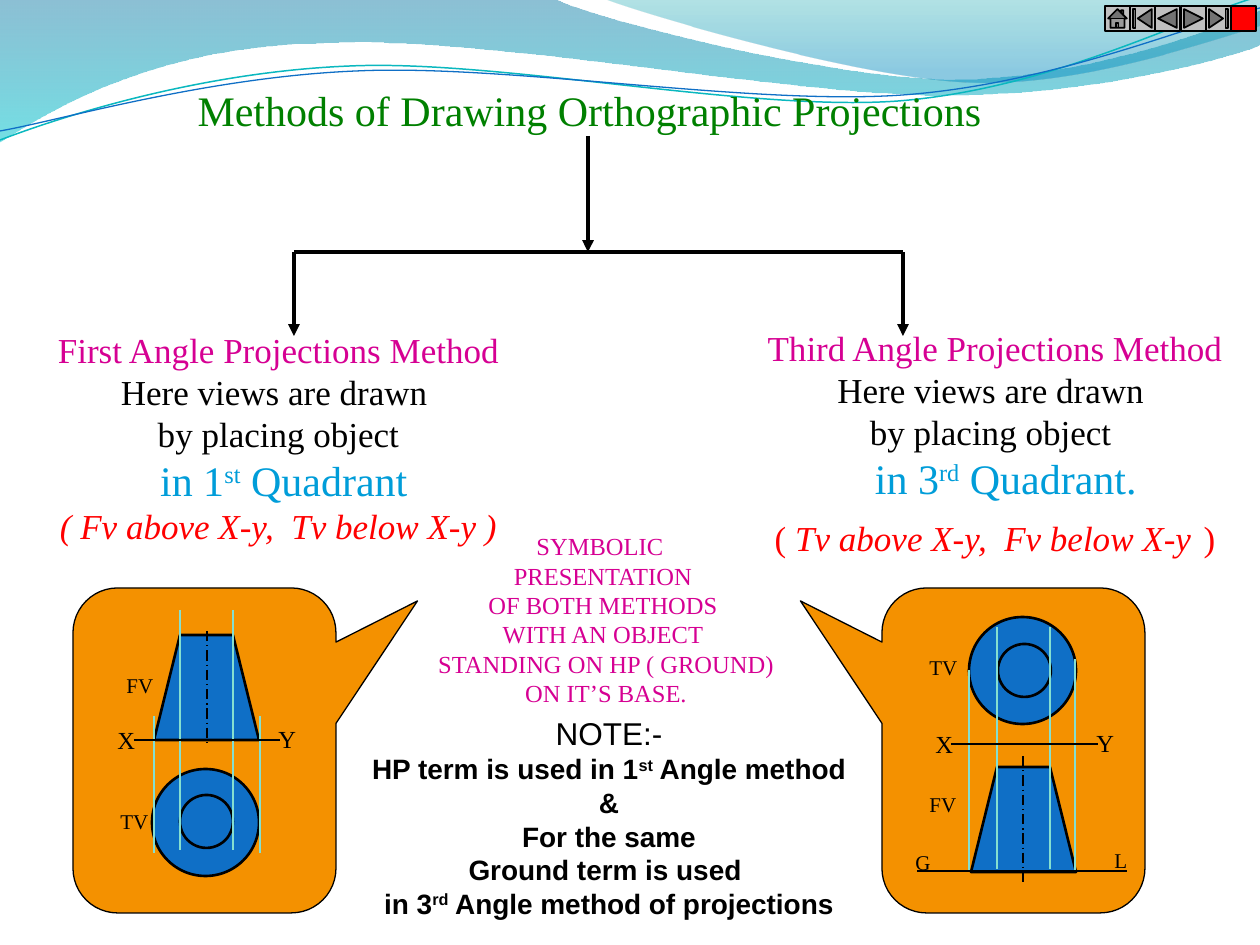
from lxml.etree import SubElement as Sub
from pptx import Presentation
from pptx.dml.color import RGBColor as RGB
from pptx.enum.dml import MSO_LINE
from pptx.enum.shapes import MSO_CONNECTOR, MSO_SHAPE as SHAPE
from pptx.enum.text import MSO_ANCHOR, MSO_AUTO_SIZE as AUTO, PP_ALIGN as ALIGN
from pptx.oxml.ns import qn
from pptx.util import Pt

PX = 914400 / 126
BLACK, RED = RGB(0, 0, 0), RGB(255, 0, 0)
GREEN, PINK = RGB(0, 128, 0), RGB(0xD6, 0, 0x93)
SKY, BLUE = RGB(0, 0x9D, 0xD9), RGB(0x0F, 0x6F, 0xC6)
AMBER, MINT = RGB(0xF4, 0x91, 0), RGB(0x85, 0xDF, 0xD0)
GREY, TEAL = RGB(0xC0, 0xC0, 0xC0), RGB(0x0A, 0xB8, 0xBF)
SERIF, SANS = "Times New Roman", "Arial"

# Waves: start, then points (2 numbers) or cubic curves (6 numbers)
BANDS = [
    ([(0, 0), (554, -1), (600, 21, 837, 79, 955, 79),
      (1075, 79, 1207, 33, 1260, 11), (1261, 45),
      (1239, 55, 1096, 96, 940, 95), (784, 95, 481, 35, 324, 43),
      (163, 45, 58, 105, -1, 142)],
     [(0, RGB(0, 0x74, 0xA1), 45), (1, RGB(0, 0xC6, 0xCF), 55)]),
    ([(604, -1), (641, 14, 859, 78, 969, 82),
      (1079, 87, 1211, 40, 1260, 26), (1260, 0)],
     [(0, RGB(0, 0xA1, 0xA9), 30), (0.8, RGB(0, 0x8B, 0xBF), 45)]),
]
STRANDS = [
    ([(0, 140), (60, 117, 199, 72, 349, 66), (498, 59, 747, 112, 898, 101),
      (1050, 89, 1182, 19, 1257, -3)], TEAL, 0.85),
    ([(0, 131), (58, 121, 207, 77, 357, 71), (508, 64, 752, 106, 903, 95),
      (1053, 84, 1186, 26, 1260, 8)], BLUE, 0.75),
]

# Text: box, font, paragraphs of runs (text, size, colour, style)
TITLE = "Methods of Drawing Orthographic Projections"
TEXTS = [
    ((31, 322, 495, 231), SERIF, [
        [("First Angle Projections Method", 20, PINK, "")],
        [("Here views are drawn ", 20, BLACK, "")],
        [("by placing object", 20, BLACK, "")],
        [(" in 1", 24, SKY, ""), ("st", 24, SKY, "s"),
         (" Quadrant", 24, SKY, "")],
        [("( Fv above X-y,  Tv below X-y )", 20, RED, "i")]]),
    ((741, 320, 508, 248), SERIF, [
        [("Third Angle Projections Method", 20, PINK, "")],
        [("Here views are drawn ", 20, BLACK, "")],
        [("by placing object ", 20, BLACK, "")],
        [(" in 3", 24, SKY, "m"), ("rd", 24, SKY, "s"),
         (" Quadrant.", 24, SKY, "")],
        [("( ", 20, RED, ""), ("Tv above X-y,  Fv below X-y", 20, RED, "i"),
         (" ", 28, RED, ""), (")", 20, RED, "")]]),
    ((412, 525, 382, 189), SERIF, [[(t, 14, PINK, "")] for t in (
        "SYMBOLIC ", "PRESENTATION", "OF BOTH METHODS", "WITH AN OBJECT",
        " STANDING ON HP ( GROUND)", " ON IT’S BASE.")]),
    ((355, 708, 508, 220), SANS, [
        [("NOTE:-", 18, BLACK, "")],
        [("HP term is used in 1", 16, BLACK, "b"), ("st", 16, BLACK, "bs"),
         (" Angle method", 16, BLACK, "b")],
        [("&", 16, BLACK, "b")],
        [("For the same", 16, BLACK, "b")],
        [("Ground term is used ", 16, BLACK, "b")],
        [("in 3", 16, BLACK, "b"), ("rd", 16, BLACK, "bs"),
         (" Angle method of projections", 16, BLACK, "b")]]),
]

# Arrows from the title to both methods
TREE = [((294, 252, 903, 252), False), ((588, 136, 588, 252), True),
        ((294, 252, 294, 336), True), ((903, 252, 903, 336), True)]

# Symbols: callout left and tip, front view, top view, lines, labels
VIEWS = [
    dict(left=73, tip=0.81, cone=(154, 635), disc=(152, 769), hole=(180, 795),
         ties=[(260, 716, 853), (154, 716, 853), (233, 610, 850),
               (180, 610, 850)],
         axis=(207, 631, 746), base=[(134, 740, 280, 1.5)],
         tags=[("FV", 114, 666, 12), ("TV", 108, 802, 12),
               ("X", 105, 719, 14), ("Y", 266, 718, 14)]),
    dict(left=882, tip=-0.81, cone=(971, 767), disc=(969, 617),
         hole=(998, 644),
         ties=[(1075, 659, 871), (969, 670, 871), (1050, 627, 869),
               (997, 627, 869)],
         axis=(1023, 756, 882),
         base=[(951, 744, 1098, 1.5), (917, 871, 1127, 0.75)],
         tags=[("X", 923, 723, 14), ("Y", 1084, 722, 14),
               ("G", 903, 843, 12), ("L", 1102, 841, 12),
               ("TV", 917, 648, 12), ("FV", 917, 785, 12)]),
]
BUTTONS = [SHAPE.ACTION_BUTTON_HOME, SHAPE.ACTION_BUTTON_BEGINNING,
           SHAPE.ACTION_BUTTON_BACK_OR_PREVIOUS,
           SHAPE.ACTION_BUTTON_FORWARD_OR_NEXT, SHAPE.ACTION_BUTTON_END,
           SHAPE.ACTION_BUTTON_CUSTOM]

deck = Presentation()
deck.slide_width, deck.slide_height = round(1260 * PX), round(945 * PX)
slide = deck.slides.add_slide(deck.slide_layouts[5])
parts = slide.shapes


def emu(nums):
    return [round(n * PX) for n in nums]


def paint(shape, fill, line=BLACK, width=0.75):
    shape.shadow.inherit = False
    if fill is None:
        shape.fill.background()
    else:
        shape.fill.solid()
        shape.fill.fore_color.rgb = fill
    shape.line.color.rgb = line
    shape.line.width = Pt(width)
    return shape


def preset(kind, box, *style):
    return paint(parts.add_shape(kind, *emu(box)), *style)


def outline(steps, close):
    """Draw points as lines, and each step of six numbers as one curve."""
    form = parts.build_freeform(*emu(steps[0]))
    pts = [emu(s[i:i + 2]) for s in steps[1:] for i in range(0, len(s), 2)]
    form.add_line_segments(pts, close=close)
    shape = form.convert_to_shape()
    nodes = iter(list(shape.element.iter(qn("a:lnTo"))))
    for step in steps[1:]:
        node = next(nodes)
        if len(step) == 6:
            node.tag = qn("a:cubicBezTo")
            for extra in (next(nodes), next(nodes)):
                node.append(extra[0])
                extra.getparent().remove(extra)
    return shape


def rule(ends, color, width, arrow=False, dash=None):
    line = parts.add_connector(MSO_CONNECTOR.STRAIGHT, *emu(ends))
    line.line.color.rgb = color
    line.line.width = Pt(width)
    if dash:
        line.line.dash_style = dash
    if arrow:
        Sub(line.line._get_or_add_ln(), qn("a:tailEnd"), type="triangle")
    Sub(line.element.spPr, qn("a:effectLst"))


def write(shape, font, paras, align):
    frame = shape.text_frame
    form = dict(word_wrap=False, auto_size=AUTO.SHAPE_TO_FIT_TEXT,
                vertical_anchor=MSO_ANCHOR.TOP)
    for key, val in form.items():
        setattr(frame, key, val)
    for i, runs in enumerate(paras):
        para = frame.add_paragraph() if i else frame.paragraphs[0]
        para.alignment = align
        para.line_spacing = Pt(1.2 * max(r[1] for r in runs))
        for text, size, color, style in runs:
            run = para.add_run()
            run.text = text
            look = dict(name=font, size=Pt(size), bold="b" in style,
                        italic="i" in style)
            for key, val in look.items():
                setattr(run.font, key, val)
            run.font.color.rgb = color
            if "s" in style:
                run._r.get_or_add_rPr().set("baseline", "30000")
            if "m" in style:
                para._p.get_or_add_pPr().set("marL", str(round(11 * PX)))


# Waves at the top
for steps, stops in BANDS:
    band = paint(outline(steps, True), None)
    band.line.fill.background()
    band.fill.gradient()
    band.fill.gradient_angle = 270
    for stop, (pos, color, alpha) in zip(band.fill.gradient_stops, stops):
        stop.position, stop.color.rgb = pos, color
    for node, stop in zip(band.element.iter(qn("a:srgbClr")), stops):
        Sub(node, qn("a:alpha"), val=str(stop[2] * 1000))
for steps, color, width in STRANDS:
    paint(outline(steps, False), None, color, width)

# Callouts, then the tree
for view in VIEWS:
    call = preset(SHAPE.ROUNDED_RECTANGULAR_CALLOUT,
                  (view["left"], 588, 263, 325), AMBER)
    for i, val in enumerate((view["tip"], -0.46, 0.17)):
        call.adjustments[i] = val
for ends, arrow in TREE:
    rule(ends, BLACK, 2.25, arrow)

# Title and text blocks
title = parts.title
title.left, title.top, title.width, title.height = emu((185, 78, 809, 63))
write(title, SERIF, [[(TITLE, 24, GREEN, "")]], ALIGN.CENTER)
title.text_frame.margin_left = title.text_frame.margin_right = 0
parts.element.append(title.element)
for box, font, paras in TEXTS:
    write(parts.add_textbox(*emu(box)), font, paras, ALIGN.CENTER)

# Front and top views
for view in VIEWS:
    x, y = view["cone"]
    cone = [(x, y + 105), (x + 26, y), (x + 79, y), (x + 105, y + 105)]
    paint(outline(cone, True), BLUE, BLACK, 1.5)
    for key, size in (("disc", 107), ("hole", 53)):
        preset(SHAPE.OVAL, (*view[key], size, size), BLUE, BLACK, 1.5)
    for x, top, end in view["ties"]:
        rule((x, top, x, end), MINT, 0.75)
    for x, y, end, width in view["base"]:
        rule((x, y, end, y), BLACK, width)
    for text, x, y, size in view["tags"]:
        box = (x, y, 28 + 13 * len(text), 38 if size == 12 else 42)
        write(parts.add_textbox(*emu(box)), SERIF,
              [[(text, size, BLACK, "")]], ALIGN.LEFT)
    x, top, end = view["axis"]
    rule((x, top, x, end), BLACK, 0.75, dash=MSO_LINE.LONG_DASH_DOT)

# Navigation buttons
for i, kind in enumerate(BUTTONS):
    fill = RED if kind == SHAPE.ACTION_BUTTON_CUSTOM else GREY
    preset(kind, (1105 + round(25.2 * i), 6, 25, 25), fill, BLACK, 1)

deck.save("out.pptx")
